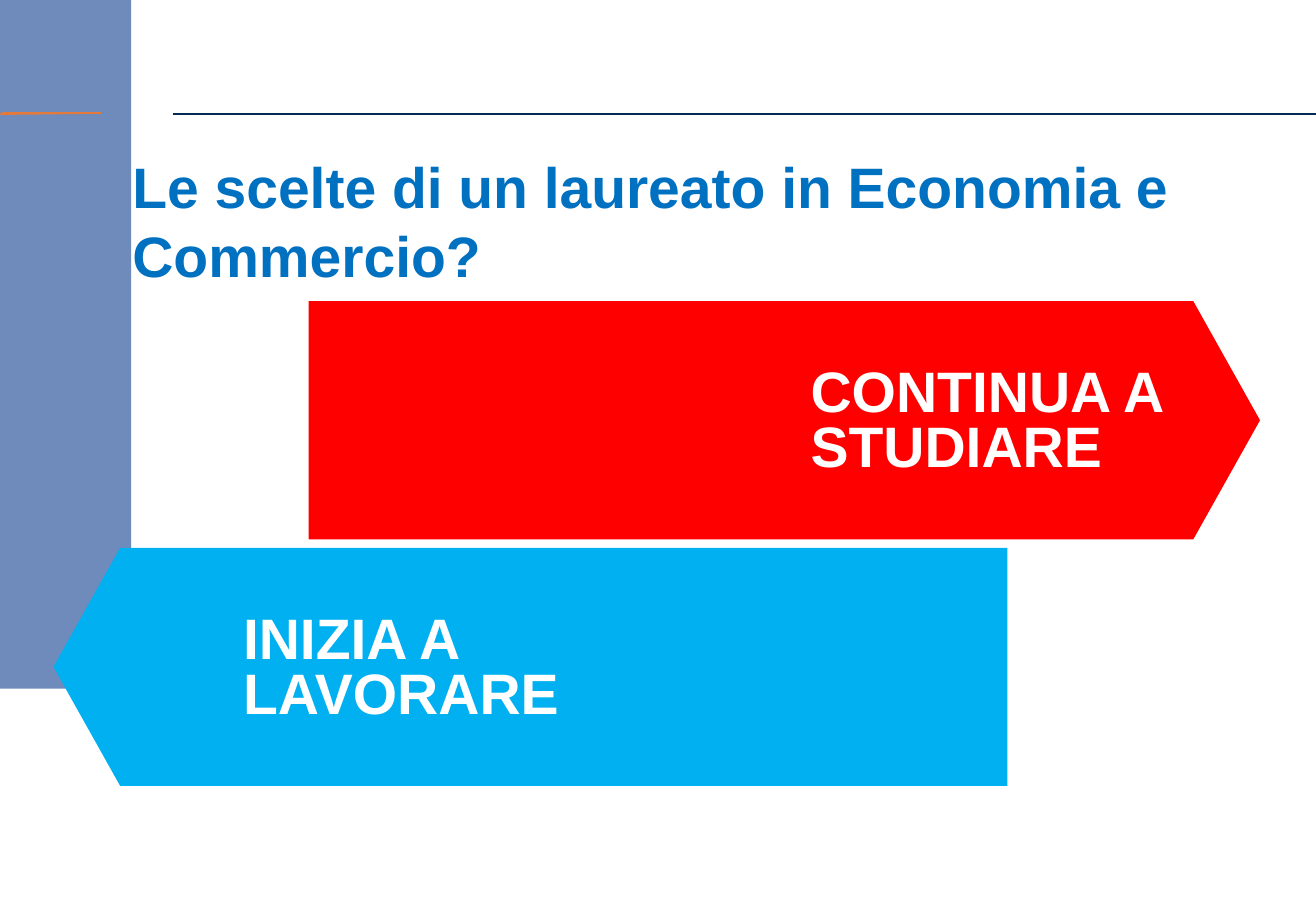
from dataclasses import dataclass

from pptx import Presentation
from pptx.dml.color import RGBColor
from pptx.enum.shapes import MSO_CONNECTOR, MSO_SHAPE
from pptx.enum.text import MSO_ANCHOR, PP_ALIGN
from pptx.oxml.ns import qn
from pptx.util import Inches, Pt

RECTANGLE = MSO_SHAPE.RECTANGLE
RIGHT_ARROW = MSO_SHAPE.RIGHT_ARROW
STRAIGHT = MSO_CONNECTOR.STRAIGHT
MIDDLE = MSO_ANCHOR.MIDDLE
LEFT = PP_ALIGN.LEFT

WIDTH, HEIGHT = Inches(10.83), Inches(7.5)
ARROW_HEIGHT, LABEL_HEIGHT, LABEL_DROP = 26.13, 12.8, 7.07
ARROW_HEAD = 0.28


@dataclass(frozen=True)
class Theme:
    font: str = "Arial"
    size: float = 33.8
    rule_width: float = 1
    title: str = "0070C0"
    label: str = "FFFFFF"
    sidebar: str = "6E8BBB"
    accent: str = "E37A3C"
    rule: str = "002B52"
    work: str = "00B0F0"
    study: str = "FF0000"


THEME = Theme()


@dataclass(frozen=True)
class Area:
    """A rectangle in percent of the slide's width and height."""
    left: float
    top: float
    width: float
    height: float

    def lengths(self) -> tuple[int, int, int, int]:
        return (across(self.left), down(self.top),
                across(self.width), down(self.height))


@dataclass(frozen=True)
class Rule:
    start: tuple[float, float]
    end: tuple[float, float]
    color: str


@dataclass(frozen=True)
class Choice:
    """An arrow with its label; horizontal places in percent of the width."""
    text: str
    color: str
    top: float
    left: float
    width: float
    label_left: float
    label_width: float
    rotation: int


RULES = (
    Rule((0, 12.53), (7.66, 12.4), THEME.accent),
    Rule((13.11, 12.53), (100, 12.53), THEME.rule),
    Rule((0.18, 12.4), (7.66, 12.4), THEME.accent),
)
CHOICES = (
    Choice("INIZIA A\vLAVORARE", THEME.work, 60.13, 4.06, 72.48, 18.1, 26.59, 180),
    Choice("CONTINUA A STUDIARE", THEME.study, 33.07, 23.45, 72.3, 61.22, 27.98, 0),
)


def across(percent: float) -> int:
    return round(WIDTH * percent / 100)


def down(percent: float) -> int:
    return round(HEIGHT * percent / 100)


def add_block(page, kind, area: Area, color: str):
    block = page.shapes.add_shape(kind, *area.lengths())
    block.shadow.inherit = False
    block.fill.solid()
    block.fill.fore_color.rgb = RGBColor.from_string(color)
    block.line.fill.background()
    return block


def add_rule(page, rule: Rule) -> None:
    (start_x, start_y), (end_x, end_y) = rule.start, rule.end
    line = page.shapes.add_connector(
        STRAIGHT, across(start_x), down(start_y), across(end_x), down(end_y))
    line.line.color.rgb = RGBColor.from_string(rule.color)
    line.line.width = Pt(THEME.rule_width)
    properties = line._element.spPr
    properties.append(properties.makeelement(qn("a:effectLst"), {}))


def write(box, text: str, color: str, left_margin: float = 0,
          right_margin: float = 0):
    """Fill a box with bold left-aligned text and return its paragraph."""
    frame = box.text_frame
    frame.word_wrap = True
    frame.margin_left, frame.margin_right = Inches(left_margin), Inches(right_margin)
    frame.margin_top = frame.margin_bottom = 0
    frame.text = text
    para = frame.paragraphs[0]
    para.alignment = LEFT
    for span in para.runs:
        span.font.name = THEME.font
        span.font.size = Pt(THEME.size)
        span.font.bold = True
        span.font.color.rgb = RGBColor.from_string(color)
    return para


def add_choice(page, choice: Choice) -> None:
    arrow = add_block(
        page, RIGHT_ARROW,
        Area(choice.left, choice.top, choice.width, ARROW_HEIGHT), choice.color)
    arrow.adjustments[0] = 1
    arrow.adjustments[1] = ARROW_HEAD
    arrow.rotation = choice.rotation
    label = add_block(
        page, RECTANGLE,
        Area(choice.label_left, choice.top + LABEL_DROP,
             choice.label_width, LABEL_HEIGHT), choice.color)
    label.text_frame.vertical_anchor = MIDDLE
    para = write(label, choice.text, THEME.label, 0.04, 0.03)
    para.line_spacing = 0.8


def main() -> None:
    deck = Presentation()
    deck.slide_width, deck.slide_height = WIDTH, HEIGHT
    page = deck.slides.add_slide(deck.slide_layouts[6])
    add_block(page, RECTANGLE, Area(0, 0, 9.97, 75.6), THEME.sidebar)
    for rule in RULES:
        add_rule(page, rule)
    title = page.shapes.add_textbox(*Area(10.06, 16.67, 80.52, 4.53).lengths())
    write(title, "Le scelte di un laureato in Economia e Commercio?", THEME.title)
    for choice in CHOICES:
        add_choice(page, choice)
    deck.save("out.pptx")


if __name__ == "__main__":
    main()
